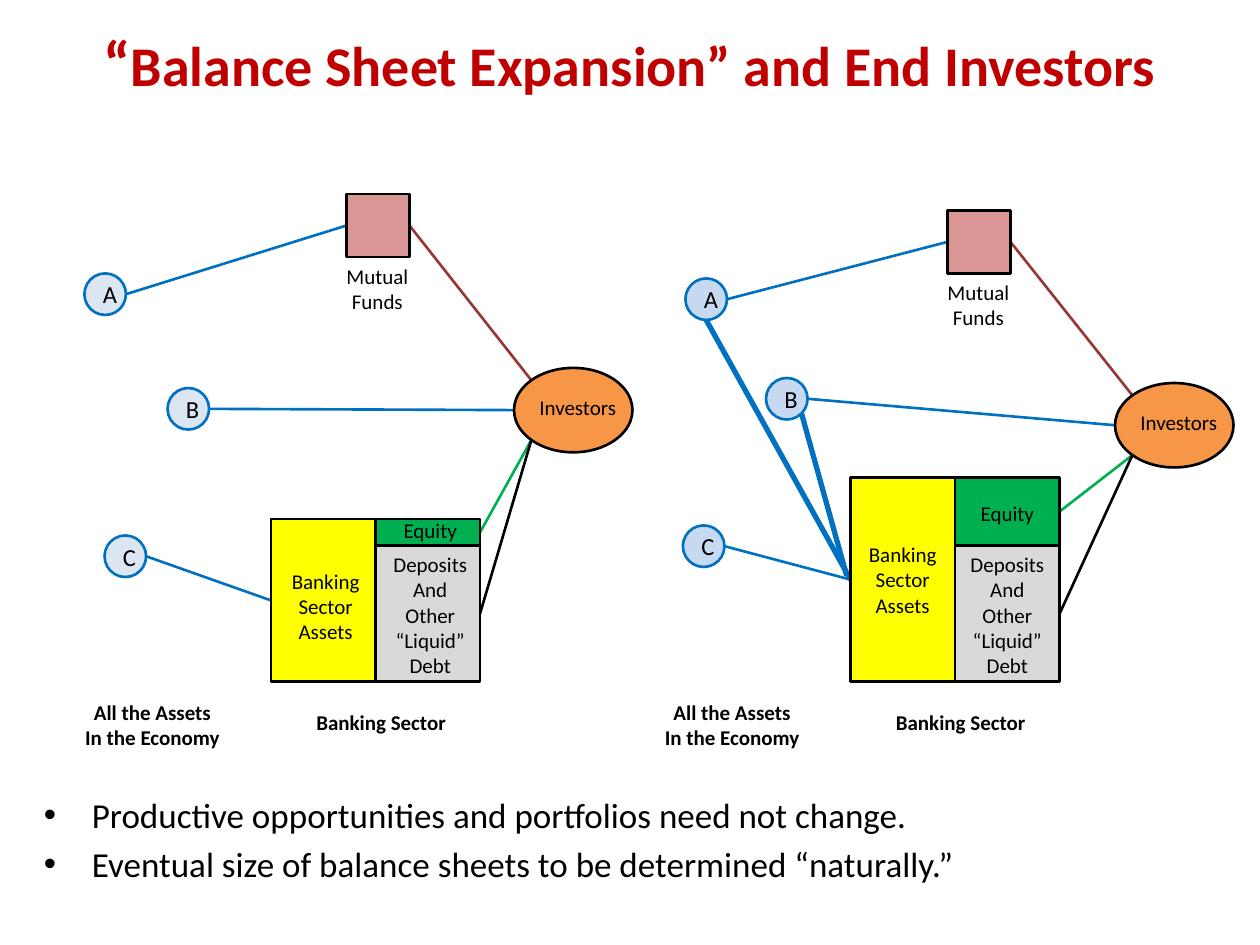
"""Build a slide comparing end investors before and after balance sheet expansion."""
from dataclasses import dataclass
from math import sqrt
from typing import NamedTuple

from lxml import etree
from pptx import Presentation
from pptx.dml.color import RGBColor
from pptx.enum import shapes, text
from pptx.oxml.ns import qn
from pptx.util import Inches, Pt


@dataclass(frozen=True)
class Theme:
    """Colours, type sizes and line widths."""
    font: str = "Calibri"
    title: str = "C00000"
    black: str = "000000"
    blue: str = "0070C0"
    green: str = "00B050"
    brown: str = "953735"
    yellow: str = "FFFF00"
    grey: str = "D9D9D9"
    orange: str = "F79646"
    pink: str = "D99694"
    title_size: int = 32
    quote_size: int = 36
    bullet_size: int = 20
    letter_size: int = 14
    label_size: int = 12
    thin: float = 1.5
    thick: float = 3


THEME = Theme()
RECT, OVAL = shapes.MSO_SHAPE.RECTANGLE, shapes.MSO_SHAPE.OVAL
CELL = 0.83
DEBT_TOP, BANK_BOTTOM = 4.33, 5.41


class Point(NamedTuple):
    """A place on the page in inches."""
    x: float
    y: float


class Area(NamedTuple):
    """A rectangle in inches."""
    x: float
    y: float
    width: float
    height: float

    def at(self, across: float, down: float) -> Point:
        """Return the point at the given fractions of the area."""
        return Point(self.x + across * self.width, self.y + down * self.height)


@dataclass(frozen=True)
class Panel:
    """One state of the economy."""
    assets: dict[str, Point]
    asset_fill: str
    fund: Point
    investors: Point
    bank: Point
    label_shift: float
    assets_label_top: float
    equity_label_top: float
    expanded: bool


PANELS = [
    Panel({"A": Point(0.67, 2.17), "B": Point(1.33, 3.08), "C": Point(0.83, 4.25)},
          "DCE6F2", Point(2.75, 1.54), Point(4.08, 2.92), Point(2.15, 4.12),
          0.02, 4.46, 4.06, False),
    Panel({"A": Point(5.44, 2.21), "B": Point(6.08, 3), "C": Point(5.42, 4.17)},
          "C6D9F1", Point(7.52, 1.67), Point(8.85, 3.04), Point(6.75, 3.79),
          0, 4.25, 3.92, True),
]


def style(frame, size: float, colour: str = THEME.black, bold: bool = False) -> None:
    """Format every run of a text frame."""
    for para in frame.paragraphs:
        for span in para.runs:
            span.font.name = THEME.font
            span.font.size = Pt(size)
            span.font.bold = bold
            span.font.color.rgb = RGBColor.from_string(colour)


def centre(frame) -> None:
    """Centre every paragraph of a text frame."""
    for para in frame.paragraphs:
        para.alignment = text.PP_ALIGN.CENTER


def add_block(page, kind, area: Area, fill: str, line: str = THEME.black, letter: str = "") -> None:
    """Draw a filled and outlined shape, with a letter if given."""
    box = page.shapes.add_shape(kind, *map(Inches, area))
    box.shadow.inherit = False
    box.fill.solid()
    box.fill.fore_color.rgb = RGBColor.from_string(fill)
    box.line.color.rgb = RGBColor.from_string(line)
    box.line.width = Pt(THEME.thin)
    if letter:
        box.text_frame.text = letter
        centre(box.text_frame)
        style(box.text_frame, THEME.letter_size)


def add_label(page, words: str, area: Area, bold: bool = False, wrap: bool = True) -> None:
    """Write a centred label."""
    frame = page.shapes.add_textbox(*map(Inches, area)).text_frame
    frame.word_wrap = wrap
    frame.auto_size = text.MSO_AUTO_SIZE.SHAPE_TO_FIT_TEXT
    frame.text = words
    centre(frame)
    style(frame, THEME.label_size, bold=bold)


def add_link(page, start: Point, end: Point, colour: str, width: float = THEME.thin) -> None:
    """Draw a straight line between two points."""
    link = page.shapes.add_connector(shapes.MSO_CONNECTOR.STRAIGHT, *map(Inches, (*start, *end)))
    link.line.color.rgb = RGBColor.from_string(colour)
    link.line.width = Pt(width)
    etree.SubElement(link._element.spPr, qn("a:effectLst"))


def add_panel(page, panel: Panel) -> None:
    """Draw the assets, funds, banks and investors of one panel."""
    near, far = 0.5 - sqrt(0.125), 0.5 + sqrt(0.125)
    circles = {name: Area(*spot, 0.33, 0.33) for name, spot in panel.assets.items()}
    fund = Area(*panel.fund, 0.5, 0.5)
    investors = Area(*panel.investors, 0.94, 0.67)
    left, top = panel.bank
    middle = left + CELL
    bank = Area(left, top, CELL, BANK_BOTTOM - top)
    equity = Area(middle, top, CELL, DEBT_TOP - top)
    debt = Area(middle, DEBT_TOP, CELL, BANK_BOTTOM - DEBT_TOP)

    if panel.expanded:
        add_link(page, circles["A"].at(0.5, 1), bank.at(0, 0.5), THEME.blue, THEME.thick)
        add_link(page, circles["B"].at(far, far), Point(left - 0.03, 4.57), THEME.blue, THEME.thick)
    for name, target in (("A", fund), ("B", investors), ("C", bank)):
        add_link(page, circles[name].at(1, 0.5), target.at(0, 0.5), THEME.blue)
    add_link(page, fund.at(1, 0.5), investors.at(near, near), THEME.brown)
    add_link(page, equity.at(1, 0.5), investors.at(near, far), THEME.green)
    add_link(page, debt.at(1, 0.5), investors.at(near, far), THEME.black)

    for name, circle in circles.items():
        add_block(page, OVAL, circle, panel.asset_fill, THEME.blue, name)
    add_block(page, OVAL, investors, THEME.orange)
    for area, fill in ((fund, THEME.pink), (bank, THEME.yellow),
                       (debt, THEME.grey), (equity, THEME.green)):
        add_block(page, RECT, area, fill)

    shift = panel.label_shift
    add_label(page, "Mutual\nFunds", Area(fund.x - 0.17, fund.y + 0.5, CELL, 0.5))
    add_label(page, "Investors", Area(investors.x + 0.09, investors.y + 0.16, CELL, 0.3))
    add_label(page, "Banking\nSector\nAssets", Area(left + shift, panel.assets_label_top, CELL, 0.71))
    add_label(page, "Equity", Area(middle + shift, panel.equity_label_top, CELL, 0.3))
    add_label(page, "Deposits\nAnd\nOther\n“Liquid”\nDebt", Area(middle + shift, DEBT_TOP, CELL, 1.11))
    add_label(page, "All the Assets\nIn the Economy", Area(left - 1.58, 5.5, 1.28, 0.5), True, False)
    add_label(page, "Banking Sector", Area(left + 0.25, 5.58, 1.25, 0.3), True, False)


def add_title(page) -> None:
    """Fill and place the title, with a larger opening quote."""
    box = page.shapes.title
    box.left, box.top, box.width, box.height = map(Inches, (0.15, 0.14, 10, 1.25))
    frame = box.text_frame
    frame.auto_size = text.MSO_AUTO_SIZE.NONE
    frame.vertical_anchor = text.MSO_ANCHOR.TOP
    frame.margin_right = Inches(0.4)
    para = frame.paragraphs[0]
    for words in ("“", "Balance Sheet Expansion” and End Investors"):
        para.add_run().text = words
    centre(frame)
    style(frame, THEME.title_size, THEME.title, True)
    para.runs[0].font.size = Pt(THEME.quote_size)


def add_bullets(page) -> None:
    """Write the two conclusions as a bulleted list."""
    frame = page.shapes.add_textbox(*map(Inches, (0.25, 6.25, 9.75, 1.92))).text_frame
    frame.word_wrap = True
    frame.text = ("Productive opportunities and portfolios need not change.\n"
                  "Eventual size of balance sheets to be determined “naturally.”")
    style(frame, THEME.bullet_size)
    for para in frame.paragraphs:
        para.space_before = Pt(0.2 * THEME.bullet_size)
        props = para._p.get_or_add_pPr()
        props.set("marL", str(Inches(0.38)))
        props.set("indent", str(-Inches(0.38)))
        etree.SubElement(props, qn("a:buFont"), typeface="Arial")
        etree.SubElement(props, qn("a:buChar"), char="•")


def main() -> None:
    """Build and save the deck."""
    deck = Presentation()
    deck.slide_width, deck.slide_height = Inches(10), Inches(7.5)
    page = deck.slides.add_slide(deck.slide_layouts.get_by_name("Title Only"))
    add_title(page)
    for panel in PANELS:
        add_panel(page, panel)
    add_bullets(page)
    deck.save("out.pptx")


if __name__ == "__main__":
    main()
